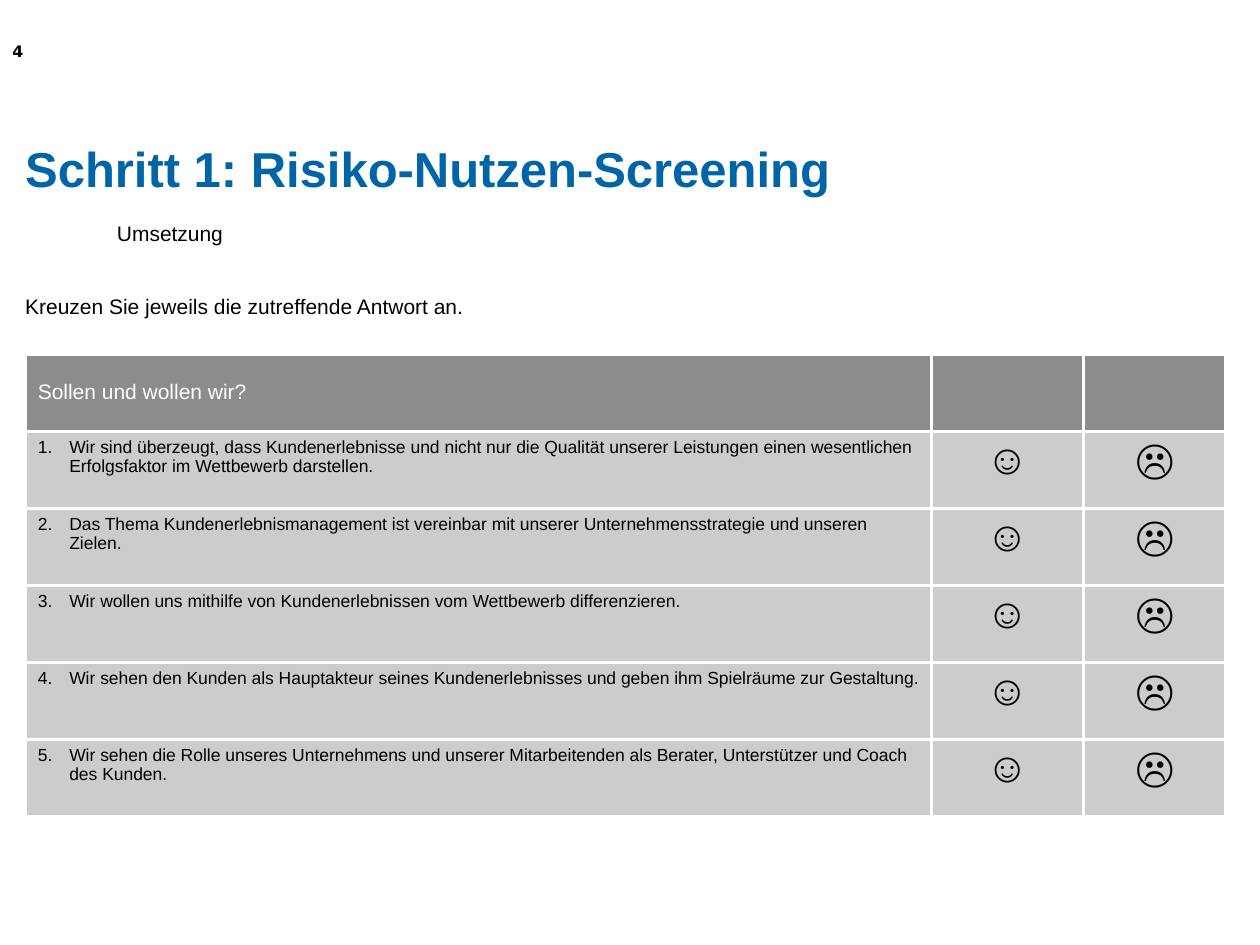
import pptx
import pptx.dml.color
import pptx.enum.text
import pptx.oxml.ns
import pptx.util
from lxml import etree

Inches = pptx.util.Inches
RGBColor = pptx.dml.color.RGBColor
Align = pptx.enum.text.PP_ALIGN
Anchor = pptx.enum.text.MSO_ANCHOR

BLUE = RGBColor(0x00, 0x65, 0xA6)
BLACK = RGBColor(0x00, 0x00, 0x00)
WHITE = RGBColor(0xFF, 0xFF, 0xFF)
HEADER_GRAY = RGBColor(0x8C, 0x8C, 0x8C)
ROW_GRAY = RGBColor(0xCC, 0xCC, 0xCC)

LEFT = 0.2
COLUMN_WIDTHS = [7.19, 1.21, 1.13]
STATEMENTS = [
    "Wir sind überzeugt, dass Kundenerlebnisse und nicht nur die Qualität unserer "
    "Leistungen einen wesentlichen Erfolgsfaktor im Wettbewerb darstellen.",
    "Das Thema Kundenerlebnismanagement ist vereinbar mit unserer "
    "Unternehmensstrategie und unseren Zielen.",
    "Wir wollen uns mithilfe von Kundenerlebnissen vom Wettbewerb differenzieren.",
    "Wir sehen den Kunden als Hauptakteur seines Kundenerlebnisses und geben ihm "
    "Spielräume zur Gestaltung.",
    "Wir sehen die Rolle unseres Unternehmens und unserer Mitarbeitenden als Berater, "
    "Unterstützer und Coach\vdes Kunden.",
]


def write(text_frame, text, size, color=BLACK, font="Arial", bold=False, align=Align.LEFT):
    paragraph = text_frame.paragraphs[0]
    paragraph.text = text
    paragraph.alignment = align
    for run in paragraph.runs:
        run.font.size = pptx.util.Pt(size)
        run.font.name = font
        run.font.bold = bold
        run.font.color.rgb = color
    return paragraph


def remove_margins(text_frame):
    text_frame.margin_left = text_frame.margin_right = 0
    text_frame.margin_top = text_frame.margin_bottom = 0


def add_title(slide, text):
    title = slide.shapes.title
    title.left, title.top = Inches(LEFT), Inches(1.05)
    title.width, title.height = Inches(9.61), Inches(0.57)
    remove_margins(title.text_frame)
    title.text_frame.vertical_anchor = Anchor.MIDDLE
    write(title.text_frame, text, 28, BLUE, bold=True)


def add_text(slide, text, left, top, width, height, size=12, wrap=True, **style):
    box = slide.shapes.add_textbox(Inches(left), Inches(top), Inches(width), Inches(height))
    box.text_frame.word_wrap = wrap
    write(box.text_frame, text, size, **style)
    return box


def number_paragraph(paragraph, number):
    properties = paragraph._p.get_or_add_pPr()
    properties.set("marL", str(Inches(0.25)))
    properties.set("indent", str(-Inches(0.25)))
    bullet = etree.SubElement(properties, pptx.oxml.ns.qn("a:buAutoNum"))
    bullet.set("type", "arabicPeriod")
    bullet.set("startAt", str(number))


def format_cell(cell, color):
    properties = cell._tc.get_or_add_tcPr()
    for side in ("lnL", "lnR", "lnT", "lnB"):
        line = etree.SubElement(properties, pptx.oxml.ns.qn(f"a:{side}"))
        line.set("w", str(pptx.util.Pt(2)))
        fill = etree.SubElement(line, pptx.oxml.ns.qn("a:solidFill"))
        etree.SubElement(fill, pptx.oxml.ns.qn("a:srgbClr")).set("val", str(WHITE))
    cell.fill.solid()
    cell.fill.fore_color.rgb = color


def add_checklist(slide, heading, statements):
    table = slide.shapes.add_table(
        len(statements) + 1, len(COLUMN_WIDTHS),
        Inches(LEFT), Inches(2.81), Inches(sum(COLUMN_WIDTHS)), Inches(3.67),
    ).table
    table.horz_banding = False
    for column, width in zip(table.columns, COLUMN_WIDTHS):
        column.width = Inches(width)
    for index, row in enumerate(table.rows):
        for cell in row.cells:
            format_cell(cell, ROW_GRAY if index else HEADER_GRAY)

    header = table.cell(0, 0)
    header.vertical_anchor = Anchor.MIDDLE
    write(header.text_frame, heading, 12, WHITE)
    for number, statement in enumerate(statements, 1):
        paragraph = write(table.cell(number, 0).text_frame, statement, 10)
        number_paragraph(paragraph, number)
        for column, face in enumerate("☺☹", 1):
            write(table.cell(number, column).text_frame, face, 24,
                  font="Times New Roman", align=Align.CENTER)


def main():
    presentation = pptx.Presentation()
    presentation.slide_width, presentation.slide_height = Inches(10), Inches(7.5)
    slide = presentation.slides.add_slide(presentation.slide_layouts[5])

    add_title(slide, "Schritt 1: Risiko-Nutzen-Screening")
    instruction = add_text(slide, "Kreuzen Sie jeweils die zutreffende Antwort an.",
                           LEFT, 2.33, 9.61, 0.31)
    remove_margins(instruction.text_frame)
    add_text(slide, "4", 0, 0.28, 0.79, 0.47, size=9, font="DejaVu Sans", bold=True)
    add_text(slide, "Umsetzung", 0.83, 1.7, 1.1, 0.3, wrap=False)
    add_checklist(slide, "Sollen und wollen wir?", STATEMENTS)

    presentation.save("out.pptx")


if __name__ == "__main__":
    main()
